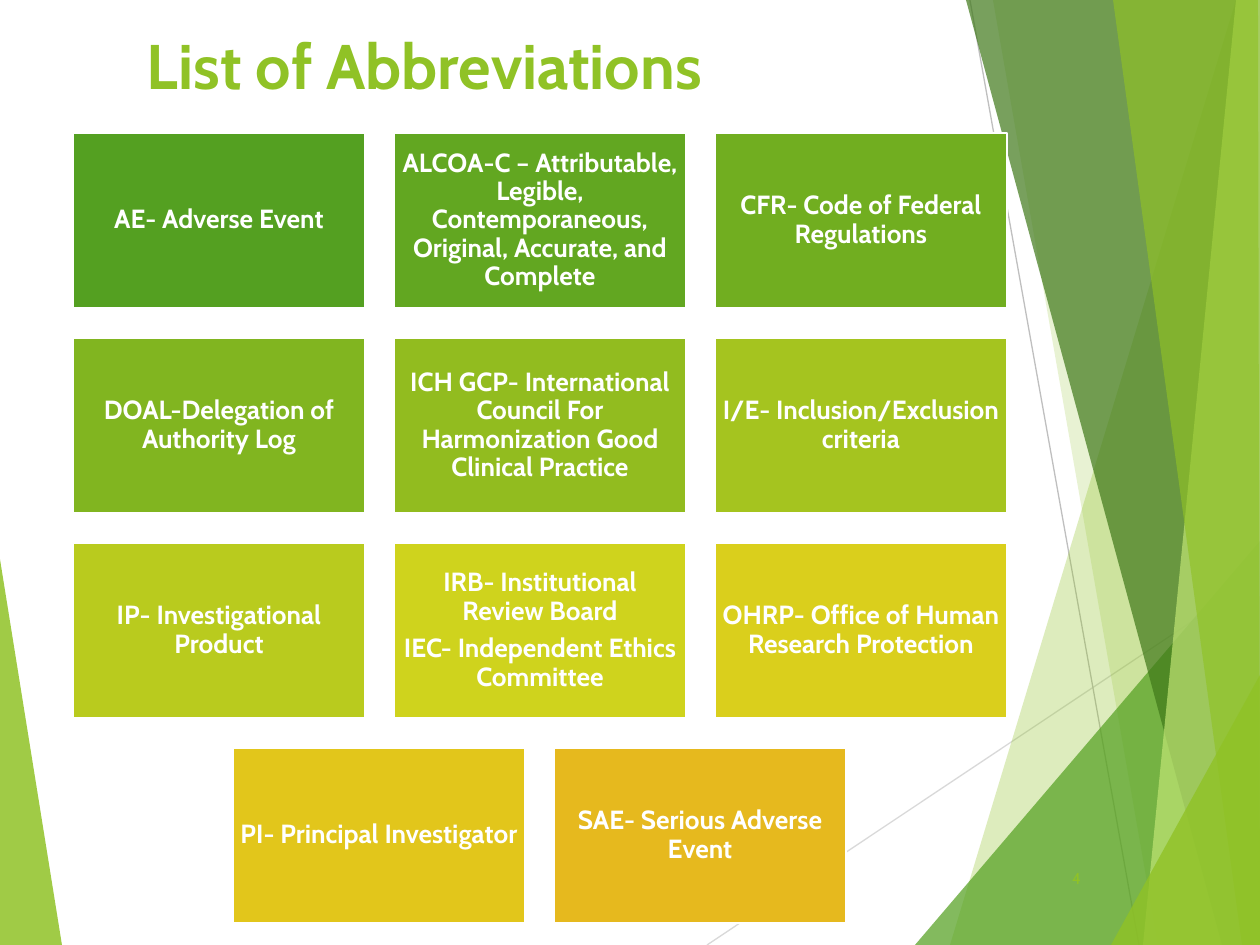
from dataclasses import dataclass

from lxml.etree import SubElement
from pptx import Presentation
from pptx.dml.color import RGBColor
from pptx.enum.shapes import MSO_CONNECTOR as Connector, MSO_SHAPE as Shape
from pptx.enum.text import MSO_ANCHOR as Anchor, PP_ALIGN as Align
from pptx.oxml.ns import qn
from pptx.util import Pt

EMU_PER_PX = 914400 / 126
WIDTH, HEIGHT = 1260, 945
COLUMNS = 3


@dataclass(frozen=True)
class Theme:
    font: str = "Cabin"
    accent: str = "90C226"
    green: str = "54A021"
    forest: str = "3F7819"
    lime: str = "C0E474"
    white: str = "FFFFFF"
    light_line: str = "D9D9D9"
    dark_line: str = "BFBFBF"
    title_size: int = 36
    card_size: int = 15
    number_size: int = 9


THEME = Theme()

FACETS = [
    ([(0, 559), (62, 945), (0, 945)], THEME.accent, 85),
    ([(1236, 0), (950, 945), (1260, 945), (1260, 0)], THEME.accent, 30),
    ([(993, 0), (1158, 945), (1260, 945), (1260, 0)], THEME.accent, 20),
    ([(915, 945), (1260, 541), (1260, 945)], THEME.green, 72),
    ([(966, 0), (1222, 945), (1260, 945), (1260, 0)], THEME.forest, 70),
    ([(1236, 0), (1143, 945), (1260, 945), (1260, 0)], THEME.lime, 70),
    ([(1113, 0), (1242, 945), (1260, 945), (1258, 0)], THEME.accent, 65),
    ([(1111, 945), (1260, 675), (1260, 945)], THEME.accent, 80),
]

LINES = [
    ((707, 945), (1260, 576), THEME.light_line),
    ((970, 0), (1139, 945), THEME.dark_line),
]

ABBREVIATIONS = [
    (["AE- Adverse Event"], "54A021"),
    (["ALCOA-C – Attributable, Legible, Contemporaneous, "
      "Original, Accurate, and Complete"], "62A721"),
    (["CFR- Code of Federal Regulations"], "71AE20"),
    (["DOAL-Delegation of Authority Log"], "81B520"),
    (["ICH GCP- International Council For Harmonization "
      "Good Clinical Practice"], "92BC1F"),
    (["I/E- Inclusion/Exclusion criteria"], "A5C41F"),
    (["IP- Investigational Product"], "B9CB1E"),
    (["IRB- Institutional Review Board",
      "IEC- Independent Ethics Committee"], "CFD31D"),
    (["OHRP- Office of Human Research Protection"], "DACF1C"),
    (["PI- Principal Investigator"], "E2C61B"),
    (["SAE- Serious Adverse Event"], "E6B91E"),
]


def px(*lengths):
    return [round(length * EMU_PER_PX) for length in lengths]


def write_text(shape, paragraphs, *, size, color, font, bold=False,
               align=Align.LEFT, anchor=Anchor.TOP, inset=(13, 6),
               line_spacing=1.0, space_after=0):
    frame = shape.text_frame
    frame.word_wrap = True
    frame.vertical_anchor = anchor
    frame.margin_left, frame.margin_top = px(*inset)
    frame.margin_right, frame.margin_bottom = px(*inset)
    for index, text in enumerate(paragraphs):
        paragraph = frame.add_paragraph() if index else frame.paragraphs[0]
        paragraph.alignment = align
        paragraph.line_spacing = line_spacing
        paragraph.space_before = Pt(0)
        paragraph.space_after = Pt(space_after)
        run = paragraph.add_run()
        run.text = text
        run.font.name = font
        run.font.size = Pt(size)
        run.font.bold = bold
        run.font.color.rgb = RGBColor.from_string(color)


class SlideBuilder:
    def __init__(self, slide, theme):
        self.slide = slide
        self.shapes = slide.shapes
        self.theme = theme

    def fill(self, shape, color):
        shape.shadow.inherit = False
        shape.fill.solid()
        shape.fill.fore_color.rgb = RGBColor.from_string(color)

    def facet(self, points, color, opacity):
        builder = self.shapes.build_freeform(*points[0], scale=EMU_PER_PX)
        builder.add_line_segments(points[1:], close=True)
        shape = builder.convert_to_shape()
        self.fill(shape, color)
        shape.line.fill.background()
        tint = shape.fill._xPr.find(qn("a:solidFill"))[0]
        SubElement(tint, qn("a:alpha"), val=str(opacity * 1000))

    def line(self, start, end, color):
        connector = self.shapes.add_connector(Connector.STRAIGHT, *px(*start, *end))
        connector.line.color.rgb = RGBColor.from_string(color)
        connector.line.width = Pt(0.75)
        SubElement(connector._element.spPr, qn("a:effectLst"))

    def title(self, text, left, top, width, height):
        title = self.shapes.title
        title.left, title.top, title.width, title.height = px(left, top, width, height)
        write_text(title, [text], size=self.theme.title_size, bold=True,
                   color=self.theme.accent, font=self.theme.font)

    def card(self, paragraphs, color, left, top, width, height):
        card = self.shapes.add_shape(Shape.RECTANGLE, *px(left, top, width, height))
        self.fill(card, color)
        card.line.color.rgb = RGBColor.from_string(self.theme.white)
        card.line.width = Pt(1.5)
        write_text(card, paragraphs, size=self.theme.card_size, bold=True,
                   color=self.theme.white, font=self.theme.font,
                   align=Align.CENTER, anchor=Anchor.MIDDLE, inset=(7, 7),
                   line_spacing=0.9, space_after=5.25)

    def card_grid(self, cards, left, top, width, height, gap):
        for row, first in enumerate(range(0, len(cards), COLUMNS)):
            row_cards = cards[first:first + COLUMNS]
            indent = (COLUMNS - len(row_cards)) * (width + gap) // 2
            for column, (paragraphs, color) in enumerate(row_cards):
                self.card(paragraphs, color,
                          left + indent + column * (width + gap),
                          top + row * (height + gap + 1), width, height)

    def slide_number(self, text, left, top, width, height):
        box = self.shapes.add_textbox(*px(left, top, width, height))
        write_text(box, [text], size=self.theme.number_size,
                   color=self.theme.accent, font=self.theme.font,
                   align=Align.RIGHT, anchor=Anchor.MIDDLE, inset=(0, 0))


def main():
    presentation = Presentation()
    presentation.slide_width, presentation.slide_height = px(WIDTH, HEIGHT)
    slide = presentation.slides.add_slide(presentation.slide_layouts[5])
    builder = SlideBuilder(slide, THEME)
    left_facet, *right_facets = FACETS
    builder.facet(*left_facet)
    for line in LINES:
        builder.line(*line)
    for facet in right_facets:
        builder.facet(*facet)
    builder.title("List of Abbreviations", 134, 21, 1053, 92)
    builder.card_grid(ABBREVIATIONS, 73, 133, 292, 175, 29)
    builder.slide_number("4", 1020, 863, 61, 30)
    presentation.save("out.pptx")


if __name__ == "__main__":
    main()
